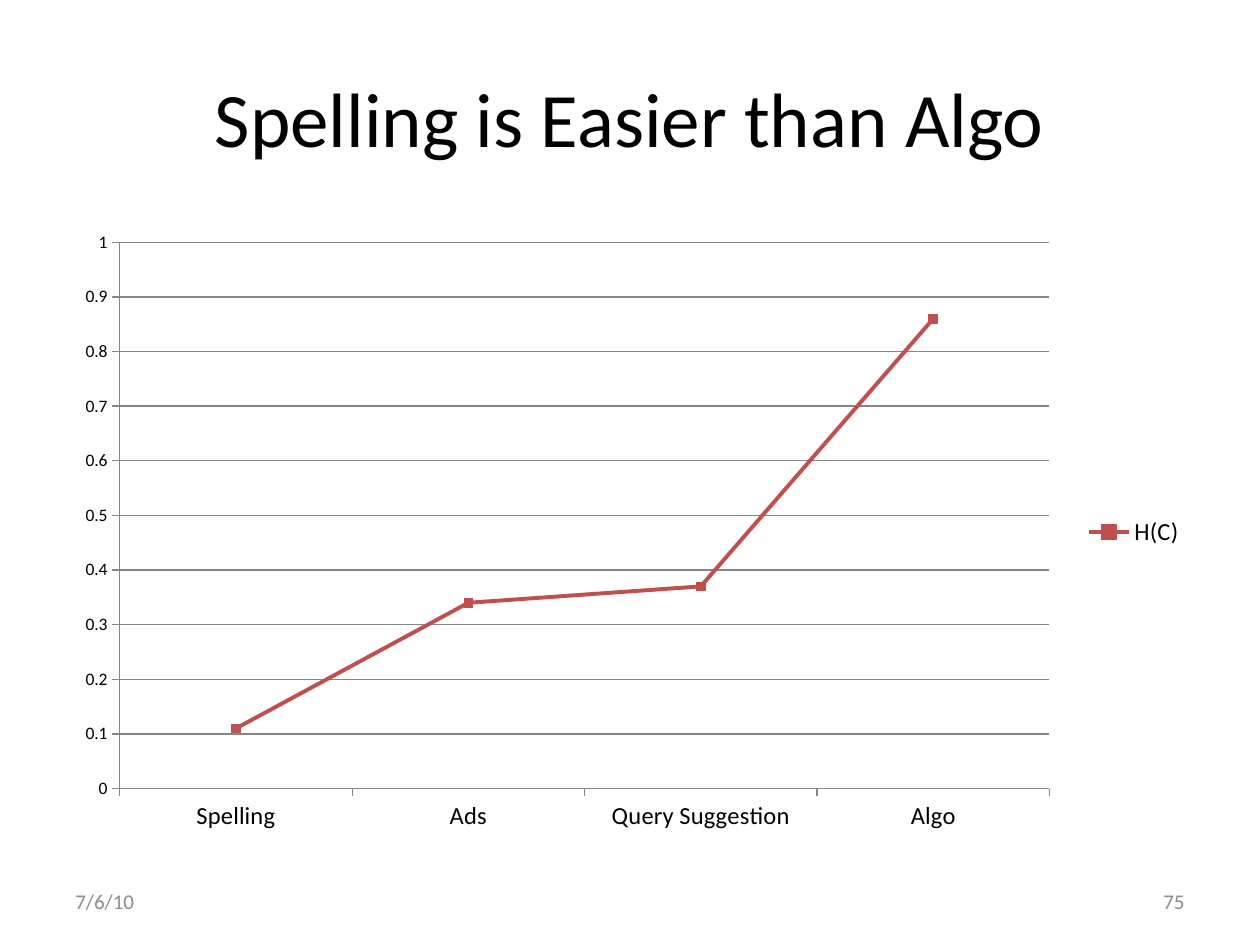
"""Build a slide with a line chart comparing H(C) across four search tasks."""
from dataclasses import dataclass

from lxml import etree
from pptx import Presentation
from pptx import util as u
from pptx.chart import data as chart_data
from pptx.dml import color
from pptx.enum import chart as charts, text
from pptx.oxml import ns


@dataclass(frozen=True)
class Theme:
    font: str = "Calibri"
    ink: color.RGBColor = color.RGBColor.from_string("000000")
    muted: color.RGBColor = color.RGBColor.from_string("8C8C8C")
    axis: color.RGBColor = color.RGBColor.from_string("868686")
    series: color.RGBColor = color.RGBColor.from_string("C0504D")
    title_size: int = 44
    label_size: int = 14
    footer_size: int = 12
    tick_size: int = 10


theme = Theme()


def add_text(slide, words, left, top, width, height, *, size, ink, align):
    box = slide.shapes.add_textbox(*map(u.Inches, (left, top, width, height)))
    frame = box.text_frame
    frame.word_wrap = True
    frame.vertical_anchor = text.MSO_ANCHOR.MIDDLE
    paragraph = frame.paragraphs[0]
    paragraph.text = words
    paragraph.alignment = align
    paragraph.font.name = theme.font
    paragraph.font.size = u.Pt(size)
    paragraph.font.color.rgb = ink


presentation = Presentation()
presentation.slide_width = u.Inches(10)
presentation.slide_height = u.Inches(7.5)
slide = presentation.slides.add_slide(presentation.slide_layouts[6])

add_text(slide, "Spelling is Easier than Algo", 0.5, 0.3, 9, 1.25,
         size=theme.title_size, ink=theme.ink, align=text.PP_ALIGN.CENTER)

entropy = chart_data.CategoryChartData()
entropy.categories = ["Spelling", "Ads", "Query Suggestion", "Algo"]
entropy.add_series("H(C)", (0.11, 0.34, 0.37, 0.86))
chart = slide.shapes.add_chart(
    charts.XL_CHART_TYPE.LINE_MARKERS,
    u.Inches(0.5), u.Inches(1.75), u.Inches(9), u.Inches(4.95), entropy,
).chart
chart.has_title = False
chart.font.name = theme.font
chart.font.size = u.Pt(theme.tick_size)
chart.font.color.rgb = theme.ink

chart.has_legend = True
chart.legend.position = charts.XL_LEGEND_POSITION.RIGHT
chart.legend.include_in_layout = False
chart.legend.font.size = u.Pt(theme.label_size)

for axis, size in ((chart.category_axis, theme.label_size),
                   (chart.value_axis, theme.tick_size)):
    axis.major_tick_mark = charts.XL_TICK_MARK.OUTSIDE
    axis.minor_tick_mark = charts.XL_TICK_MARK.NONE
    axis.format.line.color.rgb = theme.axis
    axis.format.line.width = u.Pt(0.75)
    axis.tick_labels.font.size = u.Pt(size)

value_axis = chart.value_axis
value_axis.minimum_scale = 0
value_axis.maximum_scale = 1
value_axis.major_unit = 0.1
value_axis.has_major_gridlines = True
value_axis.major_gridlines.format.line.color.rgb = theme.axis
value_axis.major_gridlines.format.line.width = u.Pt(0.75)
value_axis.tick_labels.number_format = "General"
value_axis.tick_labels.number_format_is_linked = False

plot = chart.plots[0]
plot.vary_by_categories = False
series = plot.series[0]
series.smooth = False
series.format.line.color.rgb = theme.series
series.format.line.width = u.Pt(2.25)
series.marker.style = charts.XL_MARKER_STYLE.SQUARE
series.marker.size = 5
series.marker.format.fill.solid()
series.marker.format.fill.fore_color.rgb = theme.series
series.marker.format.line.color.rgb = theme.series

plot_area = chart.element.find(".//" + ns.qn("c:plotArea"))
for layout in plot_area.findall(ns.qn("c:layout")):
    plot_area.remove(layout)
layout = etree.Element(ns.qn("c:layout"))
manual = etree.SubElement(layout, ns.qn("c:manualLayout"))
for tag, value in (("layoutTarget", "inner"), ("xMode", "edge"), ("yMode", "edge"),
                   ("x", "0.05"), ("y", "0.035"), ("w", "0.82"), ("h", "0.876")):
    etree.SubElement(manual, ns.qn(f"c:{tag}")).set("val", value)
plot_area.insert(0, layout)

for words, left, align in (("7/6/10", 0.5, text.PP_ALIGN.LEFT),
                           ("75", 7.17, text.PP_ALIGN.RIGHT)):
    add_text(slide, words, left, 6.95, 2.33, 0.4,
             size=theme.footer_size, ink=theme.muted, align=align)

presentation.save("out.pptx")
